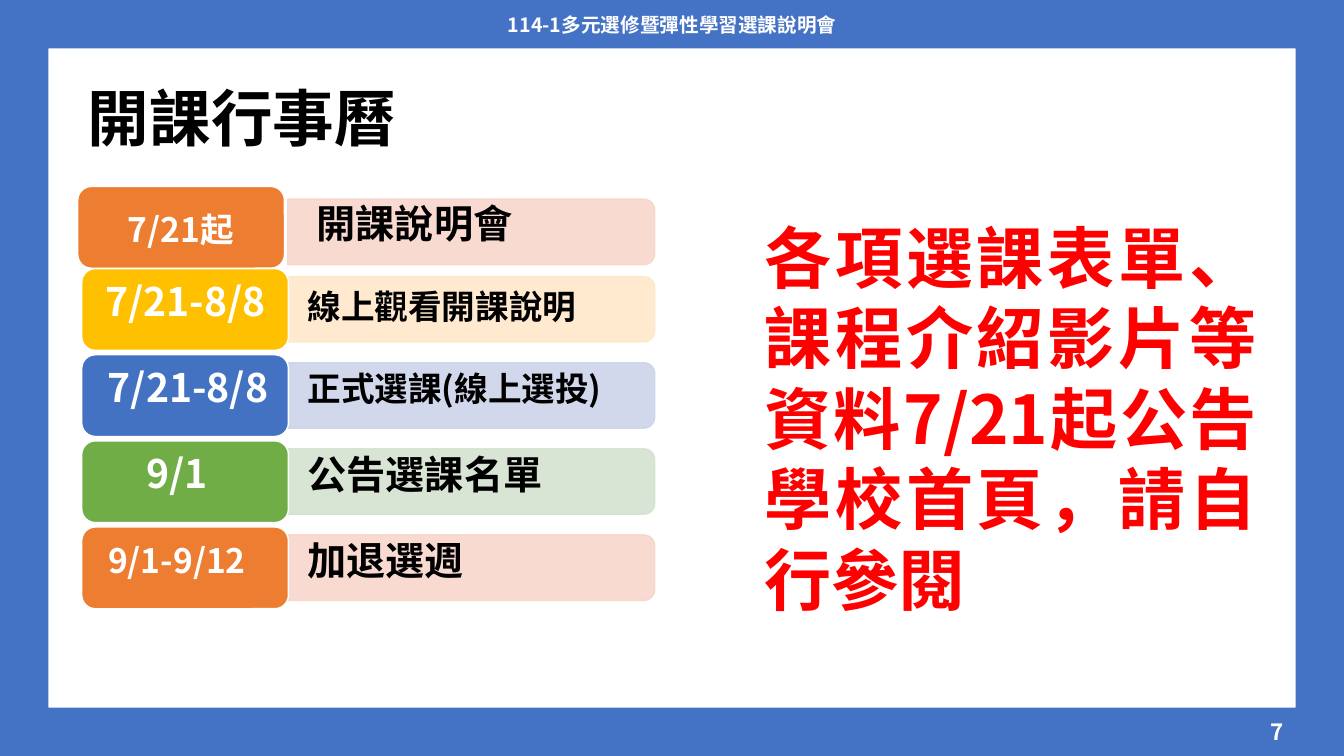
"""Build the course selection calendar slide."""
from pptx import Presentation
from pptx.dml.color import RGBColor
from pptx.enum.shapes import MSO_SHAPE
from pptx.enum.text import MSO_ANCHOR, MSO_AUTO_SIZE, PP_ALIGN
from pptx.oxml.ns import qn
from pptx.util import Cm, Pt

FRAME, BADGE, BAR = MSO_SHAPE.FRAME, MSO_SHAPE.ROUNDED_RECTANGLE, MSO_SHAPE.ROUND_2_SAME_RECTANGLE
TOP, MIDDLE = MSO_ANCHOR.TOP, MSO_ANCHOR.MIDDLE
LEFT, CENTER, RIGHT, JUSTIFY = PP_ALIGN.LEFT, PP_ALIGN.CENTER, PP_ALIGN.RIGHT, PP_ALIGN.JUSTIFY
NO_FIT, GROW = MSO_AUTO_SIZE.NONE, MSO_AUTO_SIZE.SHAPE_TO_FIT_TEXT

FONT = "Noto Sans CJK TC"
WHITE = RGBColor(0xFF, 0xFF, 0xFF)
BLACK = RGBColor(0x00, 0x00, 0x00)
RED = RGBColor(0xFF, 0x00, 0x00)
FRAME_BLUE = RGBColor(0x44, 0x72, 0xC4)
ORANGE = RGBColor(0xED, 0x7D, 0x31)
GOLD = RGBColor(0xFF, 0xC0, 0x00)
BLUE = RGBColor(0x43, 0x72, 0xC3)
GREEN = RGBColor(0x70, 0xAD, 0x47)
PALE_ORANGE = RGBColor(0xF7, 0xD5, 0xCB)
PALE_GOLD = RGBColor(0xFF, 0xE8, 0xCA)
PALE_BLUE = RGBColor(0xCC, 0xD3, 0xEA)
PALE_GREEN = RGBColor(0xD4, 0xE2, 0xCE)

SLIDE_W, SLIDE_H = 33.87, 19.05
BADGE_W, BADGE_H = 5.21, 2.06
BAR_LEFT, BAR_W, BAR_H = 7.25, 9.25, 1.65
FIRST_TOP, SECOND_TOP, PITCH = 4.7, 6.77, 2.17

EVENTS = [
    ("7/21起", 24, 5.0, "開課說明會", 28, 9.17, ORANGE, PALE_ORANGE),
    ("7/21-8/8", 28, 5.44, "線上觀看開課說明", 24, 11.43, GOLD, PALE_GOLD),
    ("7/21-8/8", 28, 5.56, "正式選課(線上選投)", 24, 9.17, BLUE, PALE_BLUE),
    ("9/1", 28, 5.0, "公告選課名單", 28, 9.17, GREEN, PALE_GREEN),
    ("9/1-9/12", 24, 5.0, "加退選週", 28, 9.17, ORANGE, PALE_ORANGE),
]


def write(tf, text, size, color, align=LEFT, anchor=MIDDLE, spacing=None):
    """Fill a text frame with one bold run."""
    tf.word_wrap = True
    tf.auto_size = NO_FIT
    tf.vertical_anchor = anchor
    p = tf.paragraphs[0]
    p.alignment = align
    if spacing:
        p.line_spacing = spacing
    r = p.add_run()
    r.text = text
    r.font.size = Pt(size)
    r.font.bold = True
    r.font.name = FONT
    r.font.color.rgb = color
    ea = r.font._element.makeelement(qn("a:ea"), {"typeface": FONT})
    r.font._element.find(qn("a:latin")).addnext(ea)


def add_text(s, left, top, width, height, text, size, color, inset=(0.25, 0.13), **style):
    """Add a text box and return its text frame."""
    tf = s.shapes.add_textbox(Cm(left), Cm(top), Cm(width), Cm(height)).text_frame
    tf.margin_left = tf.margin_right = Cm(inset[0])
    tf.margin_top = tf.margin_bottom = Cm(inset[1])
    write(tf, text, size, color, **style)
    return tf


def add_block(s, kind, left, top, width, height, adjustments, fill, line=None):
    """Add a filled preset shape."""
    sp = s.shapes.add_shape(kind, Cm(left), Cm(top), Cm(width), Cm(height))
    sp.shadow.inherit = False
    for i, value in enumerate(adjustments):
        sp.adjustments[i] = value
    sp.fill.solid()
    sp.fill.fore_color.rgb = fill
    if line is None:
        sp.line.fill.background()
    else:
        sp.line.color.rgb = line
        sp.line.width = Pt(1)
    return sp


def add_bar(s, top, color):
    """Add a translucent bar whose right-hand corners are rounded."""
    shift = (BAR_W - BAR_H) / 2
    sp = add_block(s, BAR, BAR_LEFT + shift, top - shift, BAR_H, BAR_W, (0.167, 0), color, color)
    sp.rotation = 90
    for clr in sp._element.spPr.iter(qn("a:srgbClr")):
        clr.append(clr.makeelement(qn("a:alpha"), {"val": "87000"}))


def add_event(s, i, date, date_size, date_w, label, label_size, label_w, color, pale):
    """Add one calendar row: bar, badge, label and date."""
    first = i == 0
    top = FIRST_TOP if first else SECOND_TOP + (i - 1) * PITCH
    add_bar(s, top + (0.32 if first else 0.2), pale)
    add_block(s, BADGE, 1.96 if first else 2.06, top, BADGE_W, BADGE_H, (0.167,), color, WHITE)
    add_text(s, 7.29 if first else 7.06, top + (0.25 if i < 2 else 0.15), label_w, 1.5,
             label, label_size, BLACK, inset=(0.69, 0.36), spacing=0.9)
    add_text(s, 2.06 if first else 1.96, top + (0.2 if first else -0.04), date_w, 1.85,
             date, date_size, WHITE, align=CENTER, spacing=0.9)


def add_title(s, text):
    """Place and fill the title placeholder."""
    sp = s.shapes.title
    sp.left, sp.top, sp.width, sp.height = Cm(1.96), Cm(1.7), Cm(29.97), Cm(2.72)
    write(sp.text_frame, text, 44, BLACK, spacing=0.9)


def main():
    """Build and save the slide."""
    prs = Presentation()
    prs.slide_width, prs.slide_height = Cm(SLIDE_W), Cm(SLIDE_H)
    s = prs.slides.add_slide(prs.slide_layouts[5])
    add_block(s, FRAME, 0, 0, SLIDE_W, SLIDE_H, (0.064,), FRAME_BLUE)
    add_title(s, "開課行事曆")
    add_text(s, 11.23, 0.1, 11.43, 1.02, "114-1多元選修暨彈性學習選課說明會", 14, WHITE, align=CENTER)
    add_text(s, 24.97, 17.93, 7.62, 1.02, "7", 16, WHITE, align=RIGHT)
    notice = add_text(s, 19.02, 5.31, 12.9, 10.52, "各項選課表單、課程介紹影片等資料7/21起公告學校首頁，請自行參閱",
                      48, RED, align=JUSTIFY, anchor=TOP)
    notice.auto_size = GROW
    for i, event in enumerate(EVENTS):
        add_event(s, i, *event)
    prs.save("out.pptx")


if __name__ == "__main__":
    main()
